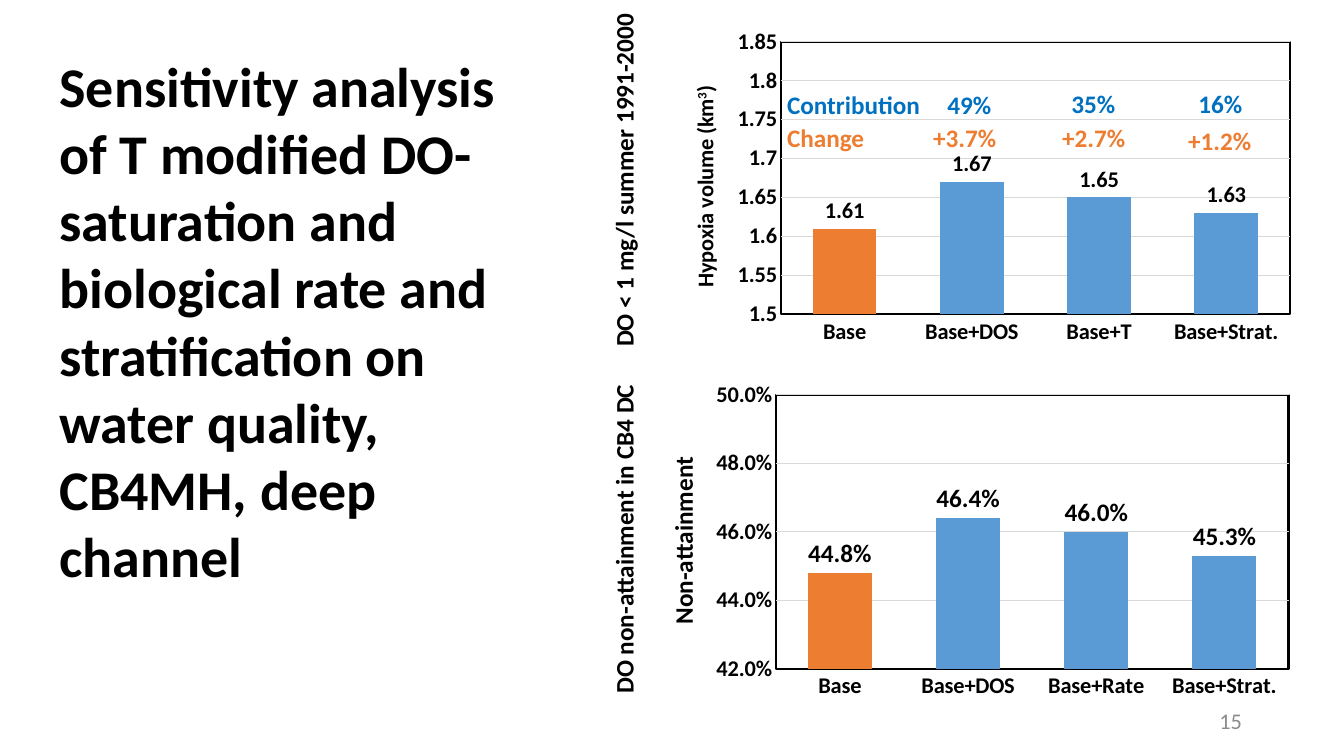
import pptx
import pptx.chart.data
import pptx.dml.color
import pptx.enum.chart
import pptx.enum.text
import pptx.oxml
import pptx.oxml.ns
import pptx.util

Pt = pptx.util.Pt
RGB = pptx.dml.color.RGBColor
BLACK = RGB(0x00, 0x00, 0x00)
GREY = RGB(0x8C, 0x8C, 0x8C)
GRID = RGB(0xD9, 0xD9, 0xD9)
BAR = RGB(0x5B, 0x9B, 0xD5)
ORANGE = RGB(0xED, 0x7D, 0x31)
BLUE = RGB(0x00, 0x70, 0xC0)
LINE = 28.8  # height of a one-line text box

HYPOXIA = {
    "cats": ["Base", "Base+DOS", "Base+T", "Base+Strat."],
    "vals": [1.61, 1.67, 1.65, 1.63],
    "scale": {"minimum_scale": 1.5, "maximum_scale": 1.85, "major_unit": 0.05},
    "ticks": "General", "marks": "#,##0.00", "size": 16,
    "title": [("Hypoxia volume (km", False), ("3", True), (")", False)],
    "plot": (0.186, 0.06, 0.79, 0.793),
}
ATTAIN = {
    "cats": ["Base", "Base+DOS", "Base+Rate", "Base+Strat."],
    "vals": [0.448, 0.464, 0.46, 0.453],
    "scale": {"minimum_scale": 0.42, "maximum_scale": 0.5, "major_unit": 0.02},
    "ticks": "0.0%", "marks": "0.0%", "size": 18,
    "title": [("Non-attainment", False)],
    "plot": (0.178, 0.06, 0.796, 0.793),
}
# Each row: colour, head, head width, value width, (text, centre x, top)
NOTES = [
    (BLUE, "Contribution", 110.2, 46, 45.4,
     [("49%", 220.3, 45.4), ("35%", 308.9, 44.7), ("16%", 399.6, 44.7)]),
    (ORANGE, "Change", 69.8, 60, 68.4,
     [("+3.7%", 217.1, 68.4), ("+2.7%", 309.3, 68.4), ("+1.2%", 399.3, 70.6)]),
]


def apply(item, values):
    for name, value in values.items():
        setattr(item, name, value)


def style(font, size, color=BLACK, bold=True):
    apply(font, {"name": "Calibri", "size": Pt(size), "bold": bold})
    font.color.rgb = color


def label(slide, box, text, size=18, color=BLACK, bold=True, turn=0, **frame):
    shape = slide.shapes.add_textbox(*map(Pt, box))
    shape.rotation = turn
    apply(shape.text_frame, {"word_wrap": False, **frame})
    run = shape.text_frame.paragraphs[0].add_run()
    run.text = text
    style(run.font, size, color, bold)
    return shape


def heading(slide, box):
    title = slide.shapes.title
    places = zip(("left", "top", "width", "height"), map(Pt, box))
    apply(title, dict(places))
    title.text = ("Sensitivity analysis of T modified DO-saturation and biological "
                  "rate and stratification on water quality, CB4MH, deep channel")
    apply(title.text_frame, {
        "word_wrap": True,
        "auto_size": pptx.enum.text.MSO_AUTO_SIZE.NONE,
        "vertical_anchor": pptx.enum.text.MSO_ANCHOR.TOP,
    })
    para = title.text_frame.paragraphs[0]
    para.alignment = pptx.enum.text.PP_ALIGN.LEFT
    style(para.runs[0].font, 40)


def frame_plot(chart, plot):
    """Fix the inner plot area and give it a black border."""
    area = chart._chartSpace.chart.plotArea
    for old in area.findall(pptx.oxml.ns.qn("c:layout")):
        area.remove(old)
    spots = "".join(f'<c:{key} val="{val}"/>' for key, val in zip("xywh", plot))
    names = pptx.oxml.ns.nsdecls("c", "a")
    area.insert(0, pptx.oxml.parse_xml(
        f'<c:layout {names}><c:manualLayout><c:layoutTarget val="inner"/>'
        f'<c:xMode val="edge"/><c:yMode val="edge"/>{spots}'
        '</c:manualLayout></c:layout>'))
    area.append(pptx.oxml.parse_xml(
        f'<c:spPr {names}><a:noFill/><a:ln w="{Pt(1.5)}"><a:solidFill>'
        f'<a:srgbClr val="{BLACK}"/></a:solidFill></a:ln></c:spPr>'))


def axes(chart, facts):
    none = pptx.enum.chart.XL_TICK_MARK.NONE
    for axis in (chart.category_axis, chart.value_axis):
        apply(axis, {"major_tick_mark": none, "minor_tick_mark": none})
        style(axis.tick_labels.font, 16)
    chart.category_axis.format.line.width = Pt(1.5)
    chart.category_axis.format.line.color.rgb = BLACK

    axis = chart.value_axis
    apply(axis, {**facts["scale"], "has_major_gridlines": True})
    apply(axis.tick_labels, {"number_format": facts["ticks"],
                             "number_format_is_linked": False})
    axis.format.line.fill.background()
    grid = axis.major_gridlines.format.line
    grid.width = Pt(0.75)
    grid.color.rgb = GRID

    # Upright axis title
    frame = axis.axis_title.text_frame
    body = frame._txBody.bodyPr
    body.set("rot", "-5400000")
    body.set("vert", "horz")
    for text, raised in facts["title"]:
        run = frame.paragraphs[0].add_run()
        run.text = text
        style(run.font, facts["size"])
        if raised:
            run._r.get_or_add_rPr().set("baseline", "30000")


def panel(slide, box, facts, caption, width, middle):
    """Column chart with an upright caption to its left."""
    left, top = box[:2]
    data = pptx.chart.data.CategoryChartData()
    data.categories = facts["cats"]
    data.add_series("Series 1", facts["vals"])
    kind = pptx.enum.chart.XL_CHART_TYPE.COLUMN_CLUSTERED
    chart = slide.shapes.add_chart(kind, *map(Pt, box), data).chart
    apply(chart, {"has_legend": False, "has_title": False})
    style(chart.font, facts["size"])
    axes(chart, facts)

    # Bars and their values
    plot = chart.plots[0]
    apply(plot, {"gap_width": 100, "overlap": -27,
                 "vary_by_categories": False, "has_data_labels": True})
    apply(plot.data_labels, {
        "show_value": True, "number_format": facts["marks"],
        "number_format_is_linked": False,
        "position": pptx.enum.chart.XL_LABEL_POSITION.OUTSIDE_END,
    })
    style(plot.data_labels.font, facts["size"])
    bars = plot.series[0]
    bars.invert_if_negative = False
    for part, color in ((bars, BAR), (bars.points[0], ORANGE)):
        part.format.fill.solid()
        part.format.fill.fore_color.rgb = color
    frame_plot(chart, facts["plot"])

    place = (left - 26.8 - width / 2, top + middle - LINE / 2, width, LINE)
    label(slide, place, caption, turn=270)


def notes(slide, box):
    """Rows of shares and changes above the bars."""
    left, top = box[:2]
    for color, head, span, width, drop, values in NOTES:
        label(slide, (left + 82.8, top + drop, span, LINE), head, color=color)
        for text, centre, fall in values:
            place = (left + centre - width / 2, top + fall, width, LINE)
            label(slide, place, text, color=color)


def number(slide, box):
    shape = label(slide, box, "15", 16, GREY, False, word_wrap=True,
                  vertical_anchor=pptx.enum.text.MSO_ANCHOR.MIDDLE)
    shape.text_frame.paragraphs[0].alignment = pptx.enum.text.PP_ALIGN.RIGHT


def main():
    deck = pptx.Presentation()
    apply(deck, {"slide_width": Pt(960), "slide_height": Pt(540)})
    slide = deck.slides.add_slide(deck.slide_layouts[5])
    upper = (472.3, 15.1, 460.1, 245.5)
    lower = (472.3, 267.1, 460.1, 247)
    heading(slide, (35.3, 33.1, 332.6, 395.3))
    panel(slide, upper, HYPOXIA, "DO < 1 mg/l summer 1991-2000", 254.9, 112.3)
    notes(slide, upper)
    panel(slide, lower, ATTAIN, "DO non-attainment in CB4 DC", 237.6, 116.7)
    number(slide, (678.2, 500.4, 216, LINE))
    deck.save("out.pptx")


if __name__ == "__main__":
    main()
